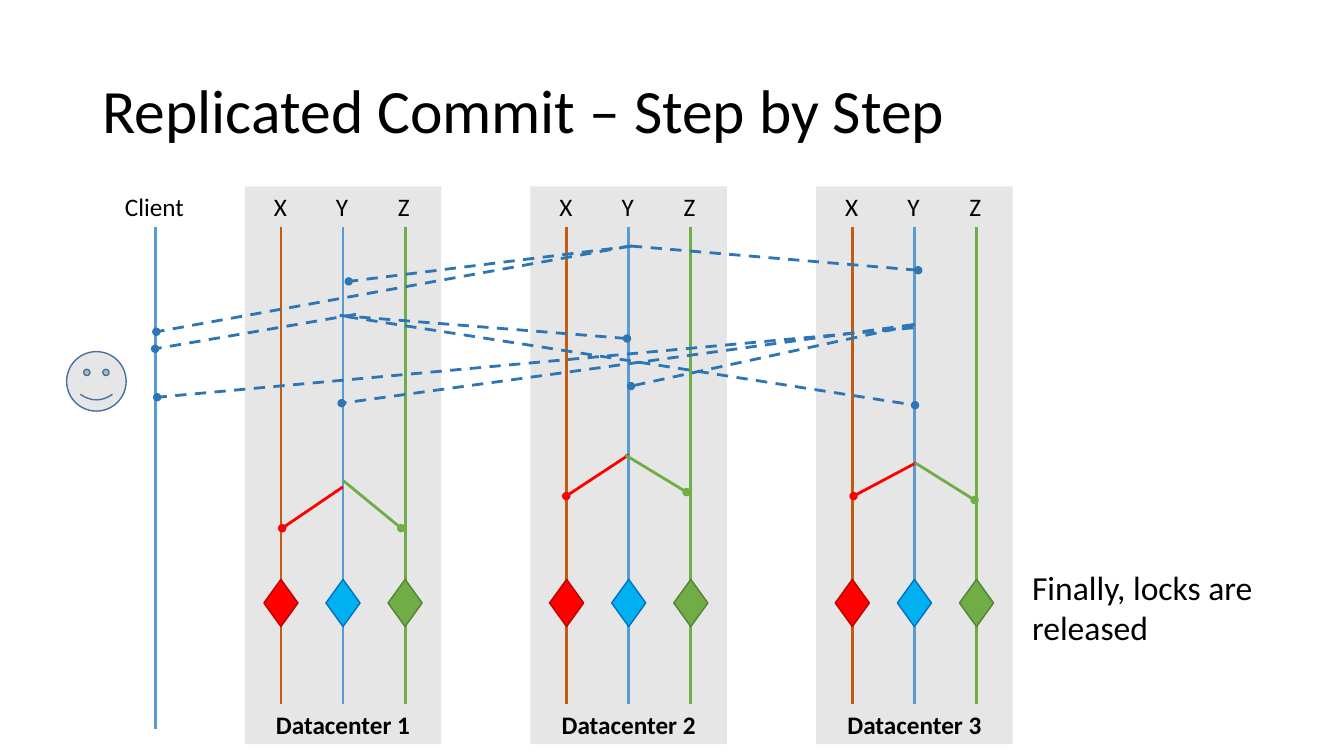
from lxml import etree
from pptx import Presentation
from pptx.dml.color import RGBColor
from pptx.enum import dml, shapes, text
from pptx.oxml import ns
from pptx.util import Cm, Pt

COLORS = {
    "black": "000000", "panel": "E7E6E6", "face": "43739E",
    "orange": "C55A11", "blue": "5B9BD5", "green": "70AD47",
    "message": "2E75B6", "red": "FF0000", "sky": "00B0F0",
    "red edge": "C00000", "sky edge": "0070C0", "green edge": "548235",
}
PANEL_LEFT, PANEL_STEP, PANEL_WIDTH = 6.17, 7.2, 4.95
TOP, LINE_TOP = 4.7, 5.72
REPLICA_OFFSET, REPLICA_STEP = 0.91, 1.565
DIAMOND_WIDTH, DIAMOND_HEIGHT = 0.86, 1.19
REPLICAS = [
    ("X", "orange", "red", "red edge"),
    ("Y", "blue", "sky", "sky edge"),
    ("Z", "green", "green", "green edge"),
]
MESSAGES = [
    (15.93, 6.2, 8.79, 7.09), (15.9, 6.2, 23.14, 6.81), (8.97, 7.92, 3.91, 8.79),
    (8.56, 7.95, 15.8, 8.53), (8.74, 7.98, 23.06, 10.21), (15.88, 6.2, 3.94, 8.36),
    (23.06, 8.18, 15.9, 9.73), (23.01, 8.18, 8.61, 10.16), (23.01, 8.26, 3.96, 10.01),
]
RELEASES = [
    ("red", 8.64, 12.27, 7.11, 13.31), ("green", 8.66, 12.12, 10.11, 13.31),
    ("red", 15.85, 11.46, 14.27, 12.5), ("green", 15.75, 11.46, 17.3, 12.4),
    ("red", 23.09, 11.66, 21.51, 12.5), ("green", 23.06, 11.66, 24.56, 12.6),
]


def color(name):
    return RGBColor.from_string(COLORS[name])


def style_text(frame, wording, size, bold=False):
    frame.text = wording
    font = frame.paragraphs[0].runs[0].font
    font.name, font.size, font.bold = "Calibri", Pt(size), bold
    font.color.rgb = color("black")


def add_label(parent, wording, size, left, top, width, height, wrap=False):
    label = parent.add_textbox(Cm(left), Cm(top), Cm(width), Cm(height))
    style_text(label.text_frame, wording, size)
    label.text_frame.word_wrap = wrap
    return label.text_frame


def add_figure(parent, kind, left, top, width, height, fill, edge=None):
    figure = parent.add_shape(kind, Cm(left), Cm(top), Cm(width), Cm(height))
    figure.shadow.inherit = False
    figure.fill.solid()
    figure.fill.fore_color.rgb = color(fill)
    if edge:
        figure.line.color.rgb = color(edge)
        figure.line.width = Pt(1)
    else:
        figure.line.fill.background()
    return figure


def add_line(parent, stroke, x1, y1, x2, y2, dashed=False, dot=False):
    line = parent.add_connector(
        shapes.MSO_CONNECTOR.STRAIGHT, Cm(x1), Cm(y1), Cm(x2), Cm(y2))
    line.line.color.rgb = color(stroke)
    line.line.width = Pt(2)
    if dashed:
        line.line.dash_style = dml.MSO_LINE.DASH
    properties = line._element.spPr
    if dot:
        outline = properties.find(ns.qn("a:ln"))
        etree.SubElement(outline, ns.qn("a:tailEnd"), type="oval")
    etree.SubElement(properties, ns.qn("a:effectLst"))


def replica_x(center, replica):
    return PANEL_LEFT + center * PANEL_STEP + REPLICA_OFFSET + replica * REPLICA_STEP


def add_datacenter(parent, center):
    group = parent.add_group_shape().shapes
    panel = add_figure(group, shapes.MSO_SHAPE.RECTANGLE,
                       PANEL_LEFT + center * PANEL_STEP, TOP, PANEL_WIDTH, 14.05, "panel")
    style_text(panel.text_frame, f"Datacenter {center + 1}", 18, bold=True)
    panel.text_frame.vertical_anchor = text.MSO_ANCHOR.BOTTOM
    panel.text_frame.paragraphs[0].alignment = text.PP_ALIGN.CENTER
    for replica, (name, stroke, _, _) in enumerate(REPLICAS):
        x = replica_x(center, replica)
        add_label(group, name, 18, x - 0.43, TOP, 0.84, 1.02)
        add_line(group, stroke, x, LINE_TOP, x, 17.73)


def add_locks(parent, center):
    for replica, (_, _, fill, edge) in enumerate(REPLICAS):
        add_figure(parent, shapes.MSO_SHAPE.DIAMOND,
                   replica_x(center, replica) - DIAMOND_WIDTH / 2, 14.6,
                   DIAMOND_WIDTH, DIAMOND_HEIGHT, fill, edge)


def main():
    deck = Presentation()
    deck.slide_width, deck.slide_height = Cm(33.87), Cm(19.05)
    canvas = deck.slides.add_slide(deck.slide_layouts[6]).shapes

    title = add_label(canvas, "Replicated Commit – Step by Step", 44,
                      2.33, 1.02, 29.21, 3.68, wrap=True)
    title.vertical_anchor = text.MSO_ANCHOR.MIDDLE
    title.paragraphs[0].line_spacing = 0.9

    add_label(canvas, "Client", 18, 2.9, TOP, 2.01, 1.02)
    add_line(canvas, "blue", 3.92, LINE_TOP, 3.92, 18.36)
    for center in range(3):
        add_datacenter(canvas, center)
    add_label(canvas, "Finally, locks are released", 24,
              25.76, 14.15, 6.55, 2.31, wrap=True)
    add_figure(canvas, shapes.MSO_SHAPE.SMILEY_FACE, 1.68, 8.86, 1.5, 1.5, "panel", "face")

    for ends in MESSAGES:
        add_line(canvas, "message", *ends, dashed=True, dot=True)
    for stroke, *ends in RELEASES:
        add_line(canvas, stroke, *ends, dot=True)
    for center in range(3):
        add_locks(canvas, center)

    deck.save("out.pptx")


if __name__ == "__main__":
    main()
